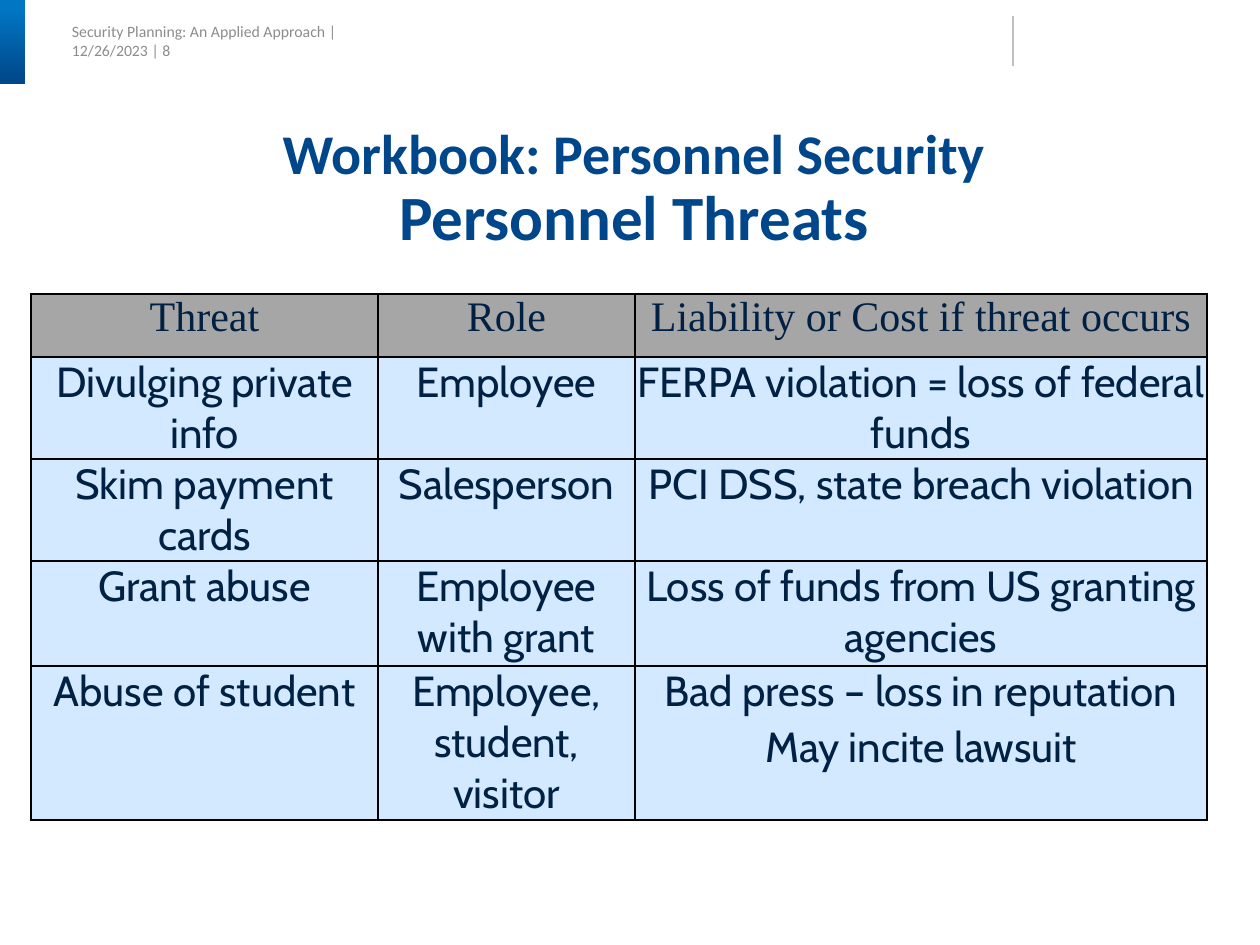
"""Build the personnel threats workbook slide."""
from typing import NamedTuple

from lxml import etree
from pptx import Presentation
from pptx import util as u
from pptx.dml.color import RGBColor
from pptx.enum import shapes, text
from pptx.oxml.ns import qn

PX = u.Inches(1) / 126
BLUE = RGBColor(0x00, 0x46, 0x8A)
BRIGHT = RGBColor(0x01, 0x76, 0xC3)
NAVY = RGBColor(0x00, 0x21, 0x43)
GRAY = RGBColor(0x8C, 0x8C, 0x8C)
RULE = RGBColor(0xBF, 0xBF, 0xBF)
HEAD = RGBColor(0xA6, 0xA6, 0xA6)
PALE = RGBColor(0xD3, 0xE9, 0xFF)
BLACK = RGBColor(0x00, 0x00, 0x00)


class Box(NamedTuple):
    x: int
    y: int
    w: int
    h: int


class Style(NamedTuple):
    font: str
    size: int
    color: RGBColor
    bold: bool = False


class Threat(NamedTuple):
    threat: str
    role: str
    liability: str


HEADER_BOX = Box(72, 29, 358, 29)
TITLE_BOX = Box(72, 126, 1124, 69)
ACCENT_BOX = Box(0, 0, 25, 84)
TABLE_BOX = Box(31, 294, 1176, 526)
COLUMNS = (347, 257, 572)
ROWS = (63, 102, 102, 105, 154)
HEADER_STYLE = Style("Calibri", 9, GRAY)
TITLE_STYLES = (Style("Calibri", 32, BLUE, True), Style("Calibri", 36, BLUE, True))
HEAD_STYLE = Style("Times New Roman", 24, NAVY)
BODY_STYLE = Style("Cabin", 24, NAVY)
THREATS = (
    Threat("Threat", "Role", "Liability or Cost if threat occurs"),
    Threat("Divulging private info", "Employee", "FERPA violation = loss of federal funds"),
    Threat("Skim payment cards", "Salesperson", "PCI DSS, state breach violation"),
    Threat("Grant abuse", "Employee with grant", "Loss of funds from US granting agencies"),
    Threat("Abuse of student", "Employee, student, visitor",
           "Bad press – loss in reputation\nMay incite lawsuit"),
)


def px(n: int) -> u.Emu:
    """Turn whole pixels into EMU."""
    return u.Emu(round(n * PX))


def place(box: Box) -> tuple:
    """Return a box as EMU lengths."""
    return tuple(px(n) for n in box)


def format_font(font, style: Style) -> None:
    """Apply a text style to a font."""
    font.name, font.size, font.bold = style.font, u.Pt(style.size), style.bold
    font.color.rgb = style.color


def add_text(s, box: Box, content: str, wrap: bool):
    """Add a text box without margins and return its text frame."""
    tf = s.shapes.add_textbox(*place(box)).text_frame
    tf.margin_left = tf.margin_top = tf.margin_right = tf.margin_bottom = 0
    tf.word_wrap = wrap
    tf.paragraphs[0].text = content
    return tf


def add_header(s) -> None:
    """Add the running header, accent bar and divider."""
    tf = add_text(s, HEADER_BOX, "Security Planning: An Applied Approach | 12/26/2023 | 8", False)
    tf.vertical_anchor = text.MSO_ANCHOR.MIDDLE
    tf.margin_top, tf.margin_right, tf.margin_bottom = u.Inches(0), u.Inches(0.2), u.Inches(0.04)
    format_font(tf.paragraphs[0].runs[0].font, HEADER_STYLE)

    sp = s.shapes.add_shape(shapes.MSO_SHAPE.ROUNDED_RECTANGLE, *place(ACCENT_BOX))
    sp.adjustments[0] = 0
    sp.shadow.inherit = False
    sp.line.fill.background()
    sp.fill.gradient()
    sp.fill.gradient_angle = 270
    for stop, (position, color) in zip(sp.fill.gradient_stops, ((0.1, BRIGHT), (1, BLUE))):
        stop.position, stop.color.rgb = position, color

    line = s.shapes.add_connector(shapes.MSO_CONNECTOR.STRAIGHT, px(1013), px(16), px(1013), px(66))
    line.line.color.rgb, line.line.width = RULE, u.Pt(0.75)
    etree.SubElement(line._element.spPr, qn("a:effectLst"))


def add_title(s) -> None:
    """Add the two-line title."""
    tf = add_text(s, TITLE_BOX, "Workbook: Personnel Security\vPersonnel Threats", True)
    p = tf.paragraphs[0]
    p.alignment, p.line_spacing = text.PP_ALIGN.CENTER, 0.9
    for r, style in zip(p.runs, TITLE_STYLES):
        format_font(r.font, style)


def add_borders(cell) -> None:
    """Outline a cell on all four sides."""
    tc_pr = cell._tc.get_or_add_tcPr()
    for side in ("lnL", "lnR", "lnT", "lnB"):
        ln = etree.SubElement(tc_pr, qn(f"a:{side}"), w=str(u.Pt(1)))
        fill = etree.SubElement(ln, qn("a:solidFill"))
        etree.SubElement(fill, qn("a:srgbClr"), val=str(BLACK))


def fill_cell(cell, content: str, style: Style, color: RGBColor) -> None:
    """Write and format one table cell."""
    cell.margin_left = cell.margin_top = cell.margin_right = cell.margin_bottom = 0
    add_borders(cell)
    cell.fill.solid()
    cell.fill.fore_color.rgb = color
    cell.text_frame.text = content
    for i, p in enumerate(cell.text_frame.paragraphs):
        p.alignment = text.PP_ALIGN.CENTER
        if i:
            p.space_before = u.Pt(3)
        format_font(p.runs[0].font, style)


def add_threats(s) -> None:
    """Add the table of threats."""
    table = s.shapes.add_table(len(ROWS), len(COLUMNS), *place(TABLE_BOX)).table
    for column, width in zip(table.columns, COLUMNS):
        column.width = px(width)
    for i, (row, height, threat) in enumerate(zip(table.rows, ROWS, THREATS)):
        row.height = px(height)
        style, color = (BODY_STYLE, PALE) if i else (HEAD_STYLE, HEAD)
        for cell, content in zip(row.cells, threat):
            fill_cell(cell, content, style, color)


def main() -> None:
    """Build and save the slide."""
    prs = Presentation()
    prs.slide_width, prs.slide_height = u.Inches(10), u.Inches(7.5)
    s = prs.slides.add_slide(prs.slide_layouts[6])
    add_header(s)
    add_title(s)
    add_threats(s)
    prs.save("out.pptx")


if __name__ == "__main__":
    main()
